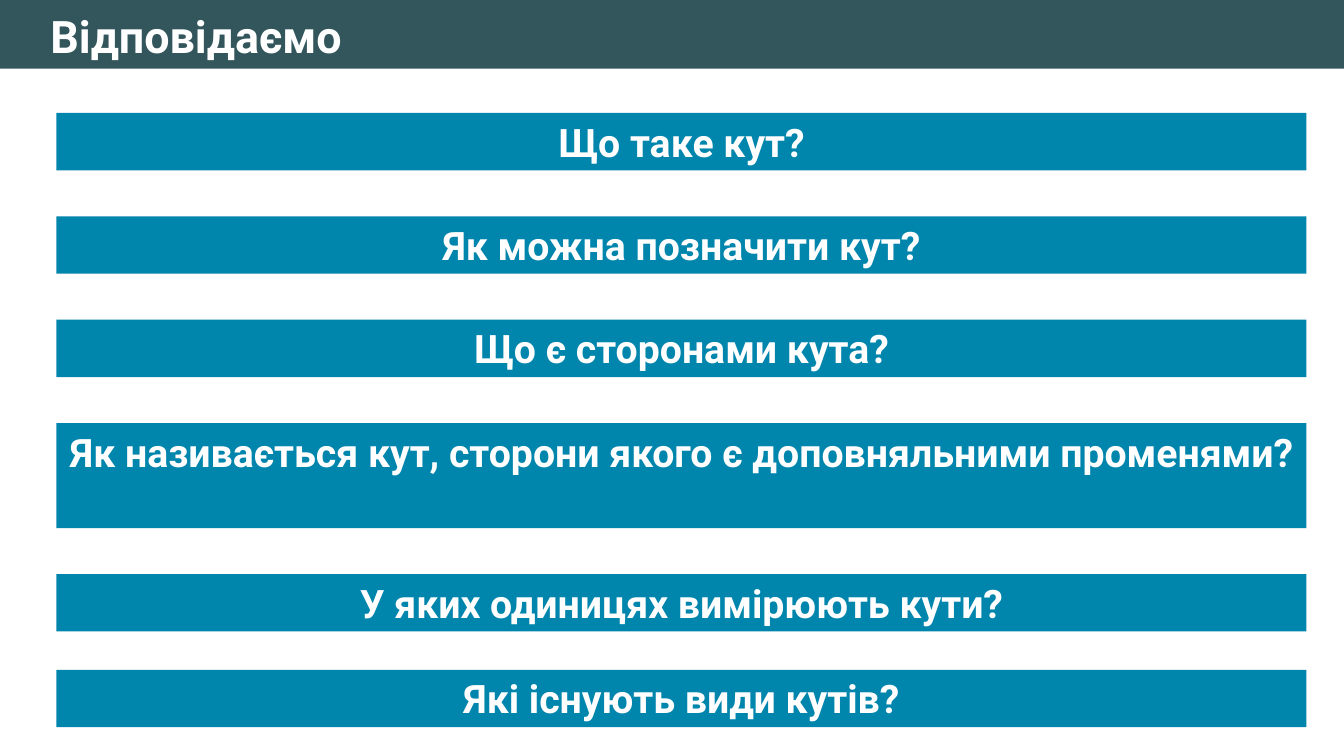
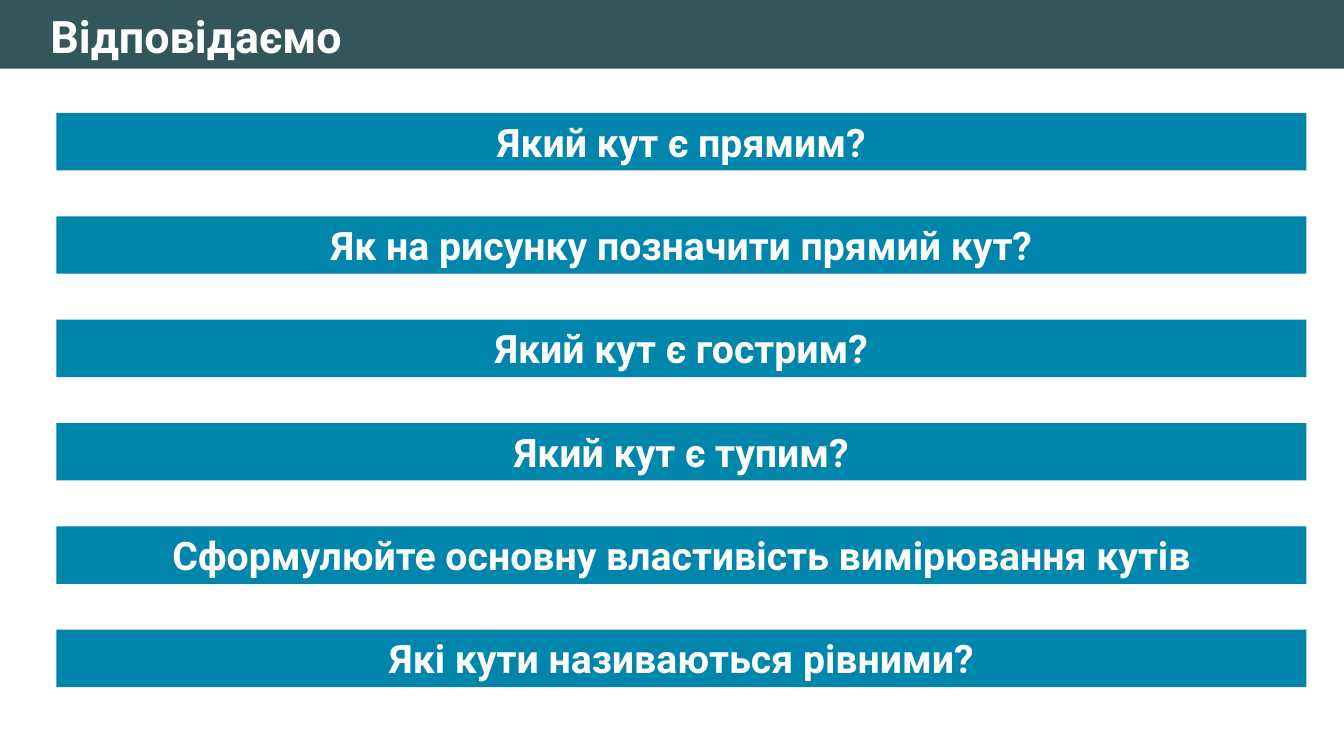
from dataclasses import dataclass

from pptx import Presentation
from pptx.dml.color import RGBColor
from pptx.enum.shapes import MSO_SHAPE
from pptx.enum.text import MSO_ANCHOR, MSO_AUTO_SIZE, PP_ALIGN
from pptx.util import Inches, Pt


@dataclass(frozen=True)
class Theme:
    font: str = "Roboto"
    header: RGBColor = RGBColor(0x33, 0x56, 0x5D)
    question: RGBColor = RGBColor(0x00, 0x85, 0xAD)
    text: RGBColor = RGBColor(0xFF, 0xFF, 0xFF)
    title_size: Pt = Pt(32)
    question_size: Pt = Pt(28)


theme = Theme()
deck = Presentation()
deck.slide_width, deck.slide_height = Inches(13.333), Inches(7.5)

# Grid of 100 columns by 100 rows
column, row = deck.slide_width / 100, deck.slide_height / 100
HEADER_ROWS = 9.1
QUESTION_LEFT, QUESTION_COLUMNS = 4.2, 93
FIRST_ROW, QUESTION_ROWS, TALL_ROWS = 14.95, 7.6, 13.9
GAP, NARROW_GAP = 6.07, 5.07

TITLE = "Відповідаємо"
# Each question: wording, height in rows, gap below in rows
lessons = [
    [
        ("Що таке кут?", QUESTION_ROWS, GAP),
        ("Як можна позначити кут?", QUESTION_ROWS, GAP),
        ("Що є сторонами кута?", QUESTION_ROWS, GAP),
        ("Як називається кут, сторони якого є доповняльними променями?", TALL_ROWS, GAP),
        ("У яких одиницях вимірюють кути?", QUESTION_ROWS, NARROW_GAP),
        ("Які існують види кутів?", QUESTION_ROWS, GAP),
    ],
    [
        ("Який кут є прямим?", QUESTION_ROWS, GAP),
        ("Як на рисунку позначити прямий кут?", QUESTION_ROWS, GAP),
        ("Який кут є гострим?", QUESTION_ROWS, GAP),
        ("Який кут є тупим?", QUESTION_ROWS, GAP),
        ("Сформулюйте основну властивість вимірювання кутів", QUESTION_ROWS, GAP),
        ("Які кути називаються рівними?", QUESTION_ROWS, GAP),
    ],
]


def add_bar(slide, left, top, columns, rows, color):
    bar = slide.shapes.add_shape(
        MSO_SHAPE.RECTANGLE,
        round(left * column), round(top * row), round(columns * column), round(rows * row),
    )
    bar.shadow.inherit = False
    bar.fill.solid()
    bar.fill.fore_color.rgb = color
    bar.line.fill.background()
    return bar


def write(shape, wording, size, alignment):
    frame = shape.text_frame
    frame.word_wrap = True
    frame.auto_size = MSO_AUTO_SIZE.NONE
    frame.vertical_anchor = MSO_ANCHOR.TOP
    paragraph = frame.paragraphs[0]
    paragraph.alignment = alignment
    paragraph.line_spacing = 1.0
    paragraph.space_before = Pt(0)
    run = paragraph.add_run()
    run.text = wording
    run.font.name, run.font.size, run.font.bold = theme.font, size, True
    run.font.color.rgb = theme.text


title_only = deck.slide_layouts[5]
for number, questions in enumerate(lessons):
    slide = deck.slides.add_slide(title_only)

    # Header band, moved to the layout so that every slide shares it
    if number == 0:
        header = add_bar(slide, 0, 0, 100, HEADER_ROWS, theme.header)
        title_only.shapes._spTree.insert(2, header._element)

    # Title
    title = slide.shapes.title
    title.left, title.top = round(3 * column), round(0.5 * row)
    title.width, title.height = round(92.85 * column), round(8.6 * row)
    write(title, TITLE, theme.title_size, PP_ALIGN.LEFT)

    # Questions, stacked downwards
    top = FIRST_ROW
    for wording, rows, gap in questions:
        question = add_bar(slide, QUESTION_LEFT, top, QUESTION_COLUMNS, rows, theme.question)
        write(question, wording, theme.question_size, PP_ALIGN.CENTER)
        top += rows + gap

deck.save("out.pptx")
